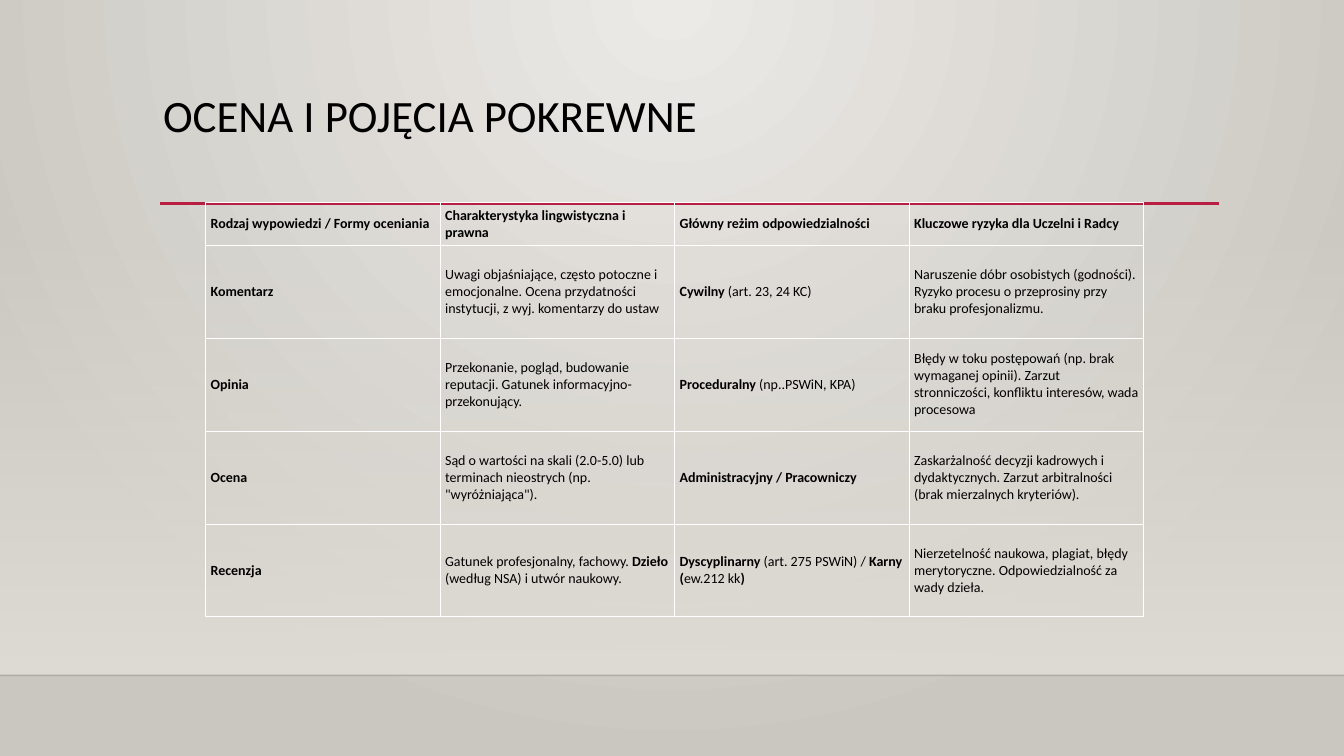
from lxml.etree import SubElement
from pptx import Presentation
from pptx.dml.color import RGBColor
from pptx.enum.shapes import MSO_CONNECTOR, MSO_SHAPE
from pptx.enum.text import MSO_ANCHOR
from pptx.oxml import parse_xml
from pptx.oxml.ns import nsdecls, qn
from pptx.util import Pt

BLACK = RGBColor(0x00, 0x00, 0x00)
WHITE = RGBColor(0xFF, 0xFF, 0xFF)
CRIMSON = RGBColor(0xB7, 0x1E, 0x42)
SAND = RGBColor(0xDF, 0xDB, 0xD5)
LIGHT_STONE = RGBColor(0xEC, 0xEA, 0xE7)
DARK_STONE = RGBColor(0xCA, 0xC7, 0xC1)

WIDTH, HEIGHT = 960, 540
FLOOR = 482.4

ROWS = [
    ["**Rodzaj wypowiedzi / Formy oceniania**",
     "**Charakterystyka lingwistyczna i prawna**",
     "**Główny reżim odpowiedzialności**",
     "**Kluczowe ryzyka dla Uczelni i Radcy**"],
    ["**Komentarz**",
     "Uwagi objaśniające, często potoczne i emocjonalne. Ocena przydatności instytucji, z wyj. komentarzy do ustaw",
     "**Cywilny** (art. 23, 24 KC)",
     "Naruszenie dóbr osobistych (godności). Ryzyko procesu o przeprosiny przy braku profesjonalizmu."],
    ["**Opinia**",
     "Przekonanie, pogląd, budowanie reputacji. Gatunek informacyjno-przekonujący.",
     "**Proceduralny** (np..PSWiN, KPA)",
     "Błędy w toku postępowań (np. brak wymaganej opinii). Zarzut stronniczości, konfliktu interesów, wada procesowa"],
    ["**Ocena**",
     "Sąd o wartości na skali (2.0-5.0) lub terminach nieostrych (np. \"wyróżniająca\").",
     "**Administracyjny / Pracowniczy**",
     "Zaskarżalność decyzji kadrowych i dydaktycznych. Zarzut arbitralności (brak mierzalnych kryteriów)."],
    ["**Recenzja**",
     "Gatunek profesjonalny, fachowy. **Dzieło** (według NSA) i utwór naukowy.",
     "**Dyscyplinarny** (art. 275 PSWiN) / **Karny (**ew.212 kk**)**",
     "Nierzetelność naukowa, plagiat, błędy merytoryczne. Odpowiedzialność za wady dzieła."],
]


class SlideBuilder:
    font_name = "Calibri"
    text_color = BLACK

    def __init__(self, slide):
        self.slide = slide

    def style(self, paragraph, size):
        paragraph.font.name = self.font_name
        paragraph.font.size = Pt(size)
        paragraph.font.color.rgb = self.text_color

    def gradient(self, fill, colors):
        fill.gradient()
        for stop, color, position in zip(fill.gradient_stops, colors, (0, 1)):
            stop.color.rgb = color
            stop.position = position

    def set_alpha(self, element, percent):
        color = next(element.iter(qn("a:srgbClr")))
        SubElement(color, qn("a:alpha"), val=str(percent * 1000))

    def background(self, inner, outer):
        self.gradient(self.slide.background.fill, (inner, outer))
        linear = next(self.slide.element.iter(qn("a:lin")))
        linear.getparent().replace(linear, parse_xml(
            f'<a:path {nsdecls("a")} path="circle">'
            '<a:fillToRect l="43000" t="0" r="43000" b="100000"/></a:path>'))

    def fading_band(self, left, top, width, height, color):
        shape = self.slide.shapes.add_shape(
            MSO_SHAPE.RECTANGLE, Pt(left), Pt(top), Pt(width), Pt(height))
        shape.shadow.inherit = False
        self.gradient(shape.fill, (color, color))
        shape.fill.gradient_angle = 270
        self.set_alpha(shape.element, 0)
        shape.line.fill.background()

    def rule(self, left, right, y, color, weight, opacity=100):
        connector = self.slide.shapes.add_connector(
            MSO_CONNECTOR.STRAIGHT, Pt(left), Pt(y), Pt(right), Pt(y))
        connector.line.color.rgb = color
        connector.line.width = Pt(weight)
        if opacity < 100:
            self.set_alpha(connector.element, opacity)
        SubElement(connector.element.spPr, qn("a:effectLst"))

    def title(self, text, left, top, width, height, size):
        text_box = self.slide.shapes.add_textbox(
            Pt(left), Pt(top), Pt(width), Pt(height))
        frame = text_box.text_frame
        frame.word_wrap = True
        frame.vertical_anchor = MSO_ANCHOR.TOP
        paragraph = frame.paragraphs[0]
        paragraph.text = text
        paragraph.line_spacing = 0.9
        self.style(paragraph, size)

    def cell(self, cell, text, size):
        cell.vertical_anchor = MSO_ANCHOR.MIDDLE
        cell.margin_left = cell.margin_right = Pt(3.6)
        cell.margin_top = cell.margin_bottom = Pt(2.16)
        properties = cell._tc.get_or_add_tcPr()
        for side in ("lnL", "lnR", "lnT", "lnB"):
            properties.append(parse_xml(
                f'<a:{side} {nsdecls("a")} w="{Pt(0.75)}"><a:solidFill>'
                f'<a:srgbClr val="{WHITE}"/></a:solidFill></a:{side}>'))
        cell.fill.background()
        paragraph = cell.text_frame.paragraphs[0]
        for index, part in enumerate(text.split("**")):
            if part:
                run = paragraph.add_run()
                run.text = part
                run.font.bold = index % 2 == 1
        self.style(paragraph, size)

    def table(self, rows, left, top, column_width, row_heights, size):
        columns = len(rows[0])
        table = self.slide.shapes.add_table(
            len(rows), columns, Pt(left), Pt(top),
            Pt(column_width * columns), Pt(sum(row_heights))).table
        table.first_row = table.horz_banding = False
        for column in table.columns:
            column.width = Pt(column_width)
        for row, height, texts in zip(table.rows, row_heights, rows):
            row.height = Pt(height)
            for cell, text in zip(row.cells, texts):
                self.cell(cell, text, size)


def main():
    presentation = Presentation()
    presentation.slide_width = Pt(WIDTH)
    presentation.slide_height = Pt(HEIGHT)
    builder = SlideBuilder(
        presentation.slides.add_slide(presentation.slide_layouts[6]))
    builder.background(LIGHT_STONE, DARK_STONE)
    builder.fading_band(0, 159, WIDTH, FLOOR - 159, SAND)
    builder.rule(0, WIDTH, FLOOR, BLACK, 1, opacity=20)
    builder.rule(114.5, 871, 145.4, CRIMSON, 2.5)
    builder.title("OCENA I POJĘCIA POKREWNE", 109.4, 63.4, 761, 62.6, 32)
    builder.table(ROWS, 146.9, 144.9, 167.5, [30.2] + [66.4] * 4, 10)
    presentation.save("out.pptx")


if __name__ == "__main__":
    main()
